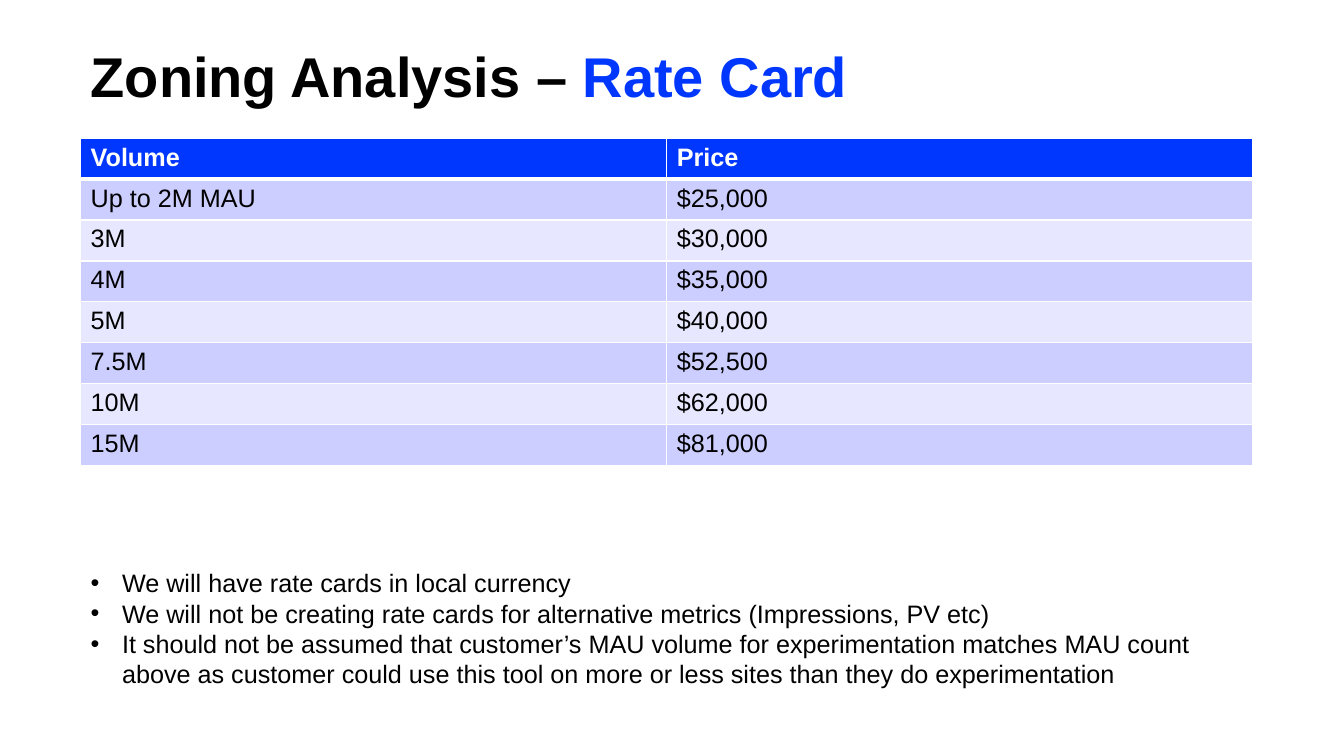
from lxml.etree import SubElement
from pptx import Presentation
from pptx.dml.color import RGBColor
from pptx.enum.text import MSO_ANCHOR, PP_ALIGN
from pptx.oxml.ns import qn
from pptx.util import Pt

FONT = "Arial"
BLUE, BLACK, WHITE = "0037FF", "000000", "FFFFFF"
BANDS = ("CCCEFF", "E7E8FF")
LEFT, WIDTH = 57.6, 837.4
RATES = [
    ("Volume", "Price"),
    ("Up to 2M MAU", "$25,000"),
    ("3M", "$30,000"),
    ("4M", "$35,000"),
    ("5M", "$40,000"),
    ("7.5M", "$52,500"),
    ("10M", "$62,000"),
    ("15M", "$81,000"),
]
NOTES = [
    "We will have rate cards in local currency",
    "We will not be creating rate cards for alternative metrics (Impressions, PV etc)",
    "It should not be assumed that customer’s MAU volume for experimentation matches "
    "MAU count above as customer could use this tool on more or less sites than they "
    "do experimentation",
]


def rgb(color):
    """Turn a hex string into a colour."""
    return RGBColor.from_string(color)


def style_font(font, size, color, bold=False):
    """Set family, size, colour and weight of a font."""
    font.name, font.size, font.bold = FONT, Pt(size), bold
    font.color.rgb = rgb(color)


def add_title(slide, left, top, width, height):
    """Place the two-colour heading in the title placeholder."""
    title = slide.shapes.title
    title.left, title.top, title.width, title.height = map(Pt, (left, top, width, height))
    frame = title.text_frame
    frame.vertical_anchor = MSO_ANCHOR.BOTTOM
    heading = frame.paragraphs[0]
    heading.alignment = PP_ALIGN.LEFT
    heading.line_spacing = 0.8
    for text, color in (("Zoning Analysis – ", BLACK), ("Rate Card", BLUE)):
        run = heading.add_run()
        run.text = text
        style_font(run.font, 40, color, True)


def add_borders(cell, bottom_width):
    """Draw white borders around a cell."""
    properties = cell._tc.get_or_add_tcPr()
    for side, width in (("L", 1), ("R", 1), ("T", 1), ("B", bottom_width)):
        line = SubElement(properties, qn(f"a:ln{side}"), w=str(Pt(width)))
        fill = SubElement(line, qn("a:solidFill"))
        SubElement(fill, qn("a:srgbClr"), val=WHITE)


def add_rate_table(slide, left, top, width, height):
    """Place the banded volume and price table."""
    rate_table = slide.shapes.add_table(
        len(RATES), 2, Pt(left), Pt(top), Pt(width), Pt(height)
    ).table
    for row, rate in enumerate(RATES):
        header = row == 0
        for column, text in enumerate(rate):
            cell = rate_table.cell(row, column)
            add_borders(cell, 3 if header else 1)
            cell.fill.solid()
            cell.fill.fore_color.rgb = rgb(BLUE if header else BANDS[(row - 1) % 2])
            cell.text = text
            style_font(cell.text_frame.paragraphs[0].font, 18,
                       WHITE if header else BLACK, header)
            if row == 1:
                cell.margin_top = Pt(3.6)


def add_notes(slide, left, top, width, height):
    """Place the bulleted notes below the table."""
    frame = slide.shapes.add_textbox(Pt(left), Pt(top), Pt(width), Pt(height)).text_frame
    frame.word_wrap = True
    for index, text in enumerate(NOTES):
        note = frame.add_paragraph() if index else frame.paragraphs[0]
        note.text = text
        properties = note._p.get_or_add_pPr()
        properties.set("marL", str(Pt(22.5)))
        properties.set("indent", str(Pt(-22.5)))
        SubElement(properties, qn("a:buFont"), typeface=FONT)
        SubElement(properties, qn("a:buChar"), char="•")
        style_font(note.font, 18, BLACK)


def main():
    """Build and save the rate card slide."""
    presentation = Presentation()
    presentation.slide_width, presentation.slide_height = Pt(960), Pt(540)
    slide = presentation.slides.add_slide(presentation.slide_layouts[5])
    add_title(slide, LEFT, 34.6, WIDTH, 46)
    add_rate_table(slide, LEFT, 98.8, WIDTH, 233.6)
    add_notes(slide, LEFT, 402, WIDTH, 94)
    presentation.save("out.pptx")


if __name__ == "__main__":
    main()
